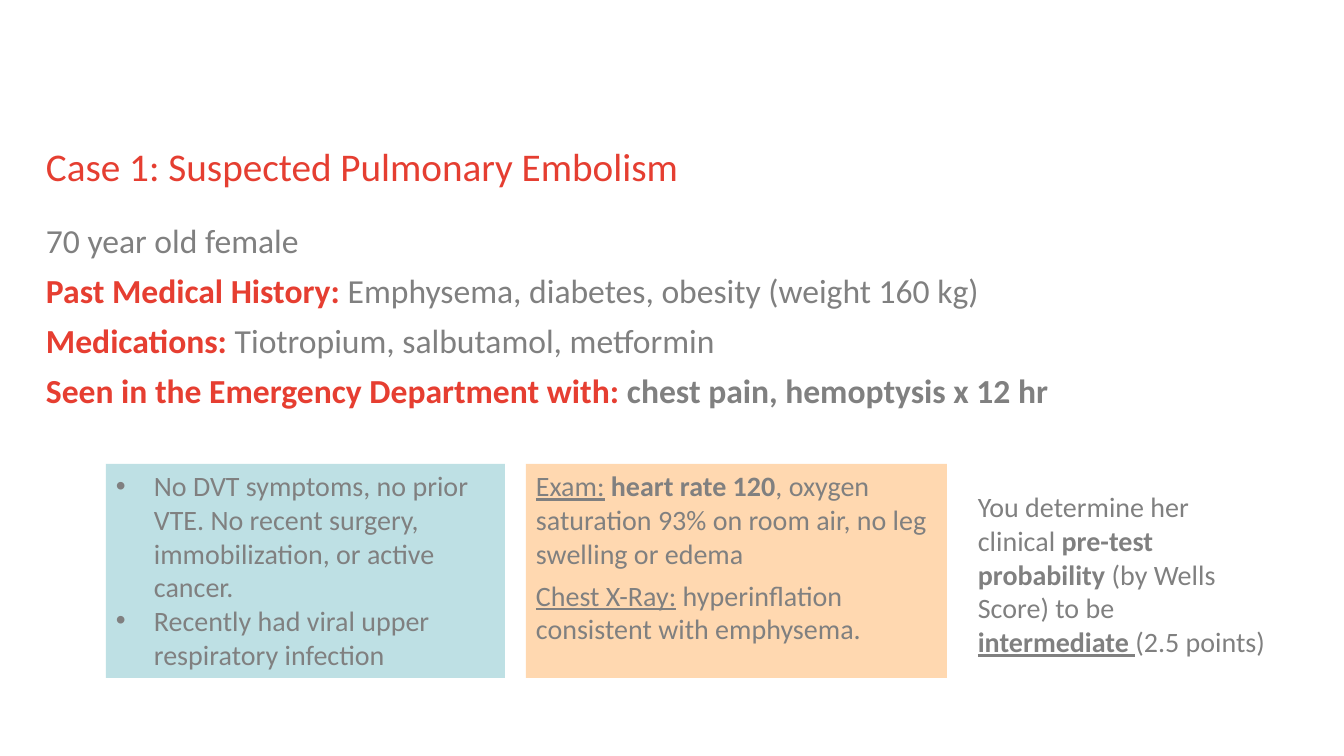
import pptx
import pptx.util
import pptx.dml.color
import pptx.enum.shapes
import pptx.enum.text
from lxml import etree

# Content: each paragraph is a list of (text, style) runs
TITLE = "Case 1: Suspected Pulmonary Embolism"
HISTORY = [
    [("70 year old female", "plain")],
    [("Past Medical History: ", "label"),
     ("Emphysema, diabetes, obesity (weight 160 kg)", "plain")],
    [("Medications: ", "label"),
     ("Tiotropium, salbutamol, metformin", "plain")],
    [("Seen in the Emergency Department with: ", "label"),
     ("chest pain, hemoptysis x 12 hr", "bold")],
]
RISK_FACTORS = [
    [("No DVT symptoms, no prior VTE. No recent surgery, "
      "immobilization, or active cancer.", "plain")],
    [("Recently had viral upper respiratory infection", "plain")],
]
FINDINGS = [
    [("Exam:", "underlined"), (" ", "plain"), ("heart rate 120", "bold"),
     (", oxygen saturation 93% on room air, no leg swelling or edema", "plain")],
    [("Chest X-Ray:", "underlined"),
     (" hyperinflation consistent with emphysema.", "plain")],
]
PRETEST = [
    [("You determine her clinical ", "plain"), ("pre-test probability ", "bold"),
     ("(by Wells Score) to be ", "plain"), ("intermediate ", "key"),
     ("(2.5 points)", "plain")],
]

# Formats
COLORS = {"title": "E53E31", "label": "E63E31", "text": "808080",
          "risk": "BEE0E4", "findings": "FFD8B0"}
STYLES = {
    "title": {"color": "title"},
    "plain": {"color": "text", "bold": False, "underline": False},
    "label": {"color": "label", "bold": True, "underline": False},
    "bold": {"color": "text", "bold": True, "underline": False},
    "underlined": {"color": "text", "bold": False, "underline": True},
    "key": {"color": "text", "bold": True, "underline": True},
}
PX_PER_INCH = 100.8
MARGIN, WIDTH = 46, 1210
CARD_TOP, CARD_HEIGHT = 464, 214
BULLET_INDENT = 38


def px(length):
    return pptx.util.Emu(round(length * 914400 / PX_PER_INCH))


def rgb(name):
    return pptx.dml.color.RGBColor.from_string(COLORS[name])


def add_bullet(paragraph):
    properties = paragraph._p.get_or_add_pPr()
    properties.set("marL", str(px(BULLET_INDENT)))
    properties.set("indent", str(-px(BULLET_INDENT)))
    for tag, key, value in (("buFont", "typeface", "Arial"), ("buChar", "char", "•")):
        bullet = etree.SubElement(properties, pptx.oxml.ns.qn("a:" + tag))
        bullet.set(key, value)


def write(shape, paragraphs, size, spacing=1.0, gap_before=0, gap_after=0,
          bulleted=False, flush=False):
    frame = shape.text_frame
    frame.word_wrap = True
    frame.auto_size = pptx.enum.text.MSO_AUTO_SIZE.NONE
    frame.vertical_anchor = pptx.enum.text.MSO_ANCHOR.TOP
    if flush:
        for side in ("left", "top", "right", "bottom"):
            setattr(frame, "margin_" + side, 0)
    for index, runs in enumerate(paragraphs):
        paragraph = frame.add_paragraph() if index else frame.paragraphs[0]
        layout = {"alignment": pptx.enum.text.PP_ALIGN.LEFT,
                  "line_spacing": spacing,
                  "space_before": pptx.util.Pt(gap_before if index else 0),
                  "space_after": pptx.util.Pt(gap_after)}
        for name, value in layout.items():
            setattr(paragraph, name, value)
        if bulleted:
            add_bullet(paragraph)
        for text, style in runs:
            run = paragraph.add_run()
            run.text = text
            values = dict(STYLES[style], name="Calibri", size=pptx.util.Pt(size))
            run.font.color.rgb = rgb(values.pop("color"))
            for name, value in values.items():
                setattr(run.font, name, value)


def add_card(slide, left, width, fill):
    card = slide.shapes.add_shape(pptx.enum.shapes.MSO_SHAPE.RECTANGLE,
                                  px(left), px(CARD_TOP), px(width), px(CARD_HEIGHT))
    card.shadow.inherit = False
    card.fill.solid()
    card.fill.fore_color.rgb = rgb(fill)
    card.line.fill.background()
    return card


def main():
    deck = pptx.Presentation()
    deck.slide_width, deck.slide_height = px(1344), px(756)
    slide = deck.slides.add_slide(deck.slide_layouts[5])

    # Title
    title = slide.shapes.title
    place = {"left": MARGIN, "top": 148, "width": WIDTH, "height": 46}
    for name, value in place.items():
        setattr(title, name, px(value))
    write(title, [[(TITLE, "title")]], 28, spacing=0.9, flush=True)

    # Patient history
    history = slide.shapes.add_textbox(px(MARGIN), px(224), px(WIDTH), px(435))
    write(history, HISTORY, 24, spacing=0.9, gap_before=10, flush=True)

    # Risk factors and findings
    write(add_card(slide, 106, 399, "risk"), RISK_FACTORS, 20, bulleted=True)
    write(add_card(slide, 526, 421, "findings"), FINDINGS, 20, gap_after=6)

    # Pre-test probability
    pretest = slide.shapes.add_textbox(px(968), px(485), px(309), px(179))
    write(pretest, PRETEST, 20)

    deck.save("out.pptx")


if __name__ == "__main__":
    main()
